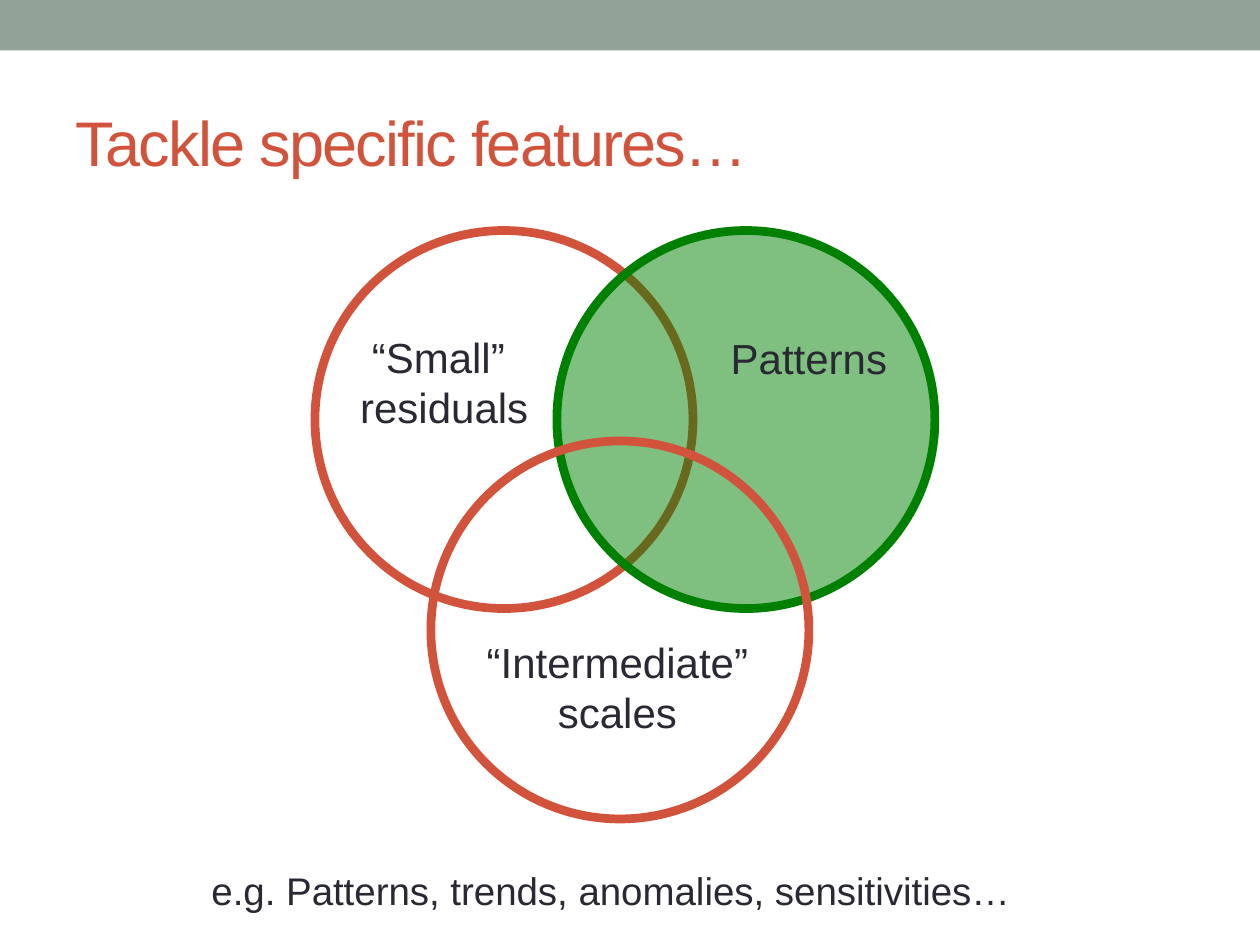
from dataclasses import dataclass

from pptx import Presentation
from pptx.dml.color import RGBColor
from pptx.enum.shapes import MSO_SHAPE
from pptx.enum.text import MSO_ANCHOR, MSO_AUTO_SIZE, PP_ALIGN
from pptx.oxml.ns import qn
from pptx.util import Inches, Pt
from lxml.etree import SubElement


@dataclass(frozen=True)
class Theme:
    font: str = "Arial"
    band: RGBColor = RGBColor(0x93, 0xA2, 0x99)
    accent: RGBColor = RGBColor(0xD2, 0x53, 0x3C)
    highlight: RGBColor = RGBColor(0x00, 0x80, 0x00)
    text: RGBColor = RGBColor(0x29, 0x29, 0x34)
    title_size: int = 36
    label_size: int = 24
    caption_size: int = 22
    ring_width: int = 5
    highlight_opacity: int = 50


THEME = Theme()
CIRCLE_DIAMETER = 3


def set_attributes(target, values):
    for name, value in values.items():
        setattr(target, name, value)


def place(shape, left, top, width, height):
    set_attributes(shape, {
        "left": Inches(left), "top": Inches(top),
        "width": Inches(width), "height": Inches(height),
    })


def format_font(font, size, color):
    set_attributes(font, {"name": THEME.font, "size": Pt(size)})
    font.color.rgb = color


def add_band(slide):
    band = slide.shapes.add_shape(
        MSO_SHAPE.RECTANGLE, 0, 0, Inches(10), Inches(0.4))
    band.shadow.inherit = False
    band.fill.solid()
    band.fill.fore_color.rgb = THEME.band
    band.line.fill.background()


def format_title(slide, text):
    title = slide.shapes.title
    place(title, 0.5, 0.58, 9, 1.08)
    title.text_frame.text = text
    title.text_frame.vertical_anchor = MSO_ANCHOR.MIDDLE
    paragraph = title.text_frame.paragraphs[0]
    paragraph.alignment = PP_ALIGN.LEFT
    run = paragraph.runs[0]
    format_font(run.font, THEME.title_size, THEME.accent)
    run.font._element.set("spc", "-100")


def add_circle(slide, left, top, color, opacity=0):
    circle = slide.shapes.add_shape(
        MSO_SHAPE.OVAL, Inches(left), Inches(top),
        Inches(CIRCLE_DIAMETER), Inches(CIRCLE_DIAMETER))
    circle.shadow.inherit = False
    circle.line.color.rgb = color
    circle.line.width = Pt(THEME.ring_width)
    if opacity:
        circle.fill.solid()
        circle.fill.fore_color.rgb = color
        color_element = circle._element.spPr.find(
            f"{qn('a:solidFill')}/{qn('a:srgbClr')}")
        SubElement(color_element, qn("a:alpha"), val=str(opacity * 1000))
    else:
        circle.fill.background()


def add_label(slide, lines, box, size, alignment=PP_ALIGN.CENTER):
    label = slide.shapes.add_textbox(*map(Inches, box))
    frame = label.text_frame
    set_attributes(frame, {
        "text": "\n".join(lines),
        "word_wrap": False,
        "auto_size": MSO_AUTO_SIZE.SHAPE_TO_FIT_TEXT,
    })
    for paragraph in frame.paragraphs:
        paragraph.alignment = alignment
        format_font(paragraph.runs[0].font, size, THEME.text)


def main():
    presentation = Presentation()
    set_attributes(presentation, {
        "slide_width": Inches(10), "slide_height": Inches(7.5)})
    slide = presentation.slides.add_slide(presentation.slide_layouts[5])

    add_band(slide)
    format_title(slide, "Tackle specific features…")

    add_circle(slide, 2.5, 1.83, THEME.accent)
    add_circle(slide, 4.42, 1.83, THEME.highlight, THEME.highlight_opacity)
    add_circle(slide, 3.42, 3.5, THEME.accent)

    labels = [
        (["“Small” ", "residuals"], (2.75, 2.58, 1.55, 0.91)),
        (["“Intermediate”", "scales"], (3.75, 5, 2.3, 0.91)),
        (["Patterns"], (5.69, 2.59, 1.46, 0.5)),
    ]
    for lines, box in labels:
        add_label(slide, lines, box, THEME.label_size)
    add_label(slide, ["e.g. Patterns, trends, anomalies, sensitivities…"],
              (1.58, 6.83, 6.62, 0.47), THEME.caption_size, PP_ALIGN.LEFT)

    presentation.save("out.pptx")


if __name__ == "__main__":
    main()
